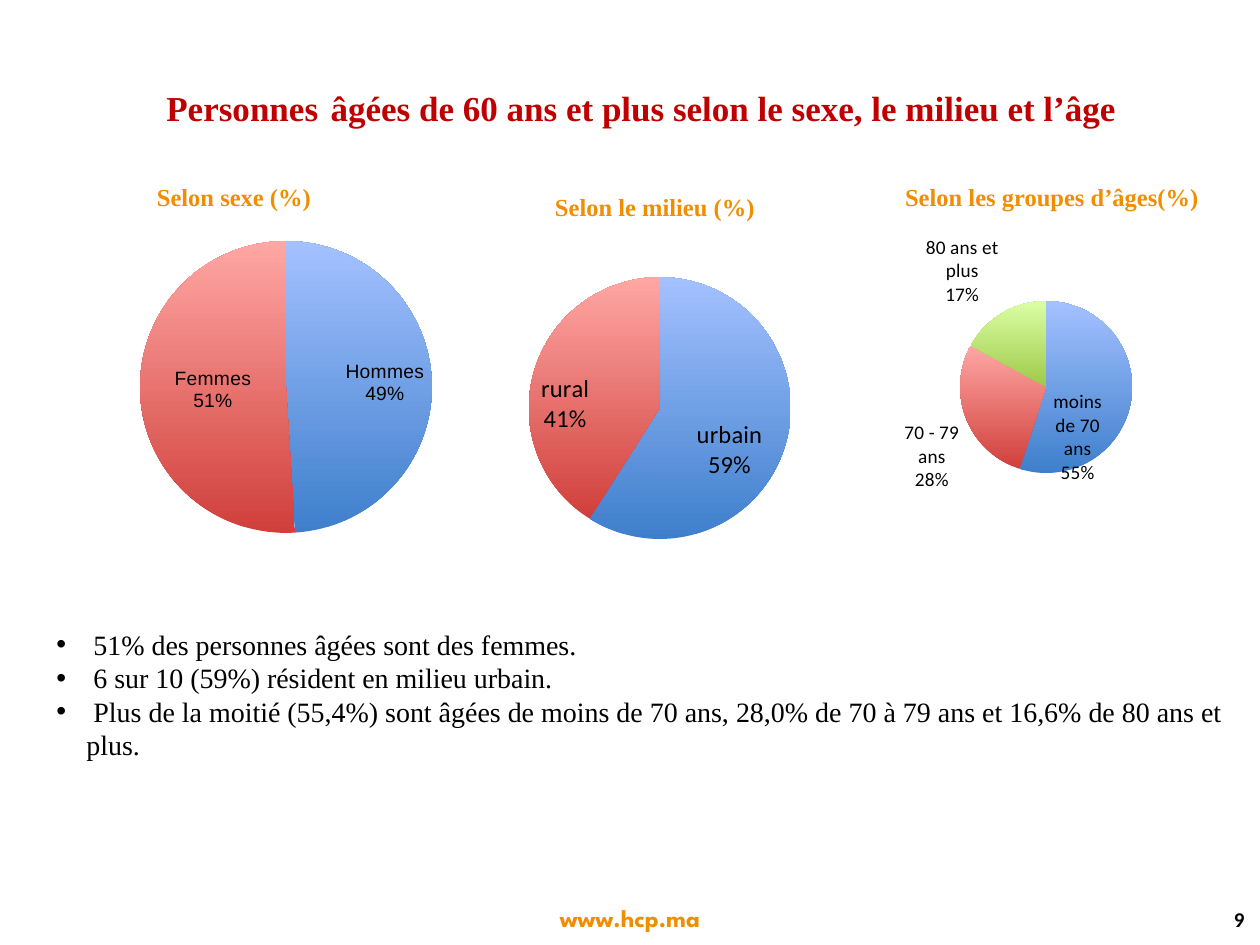
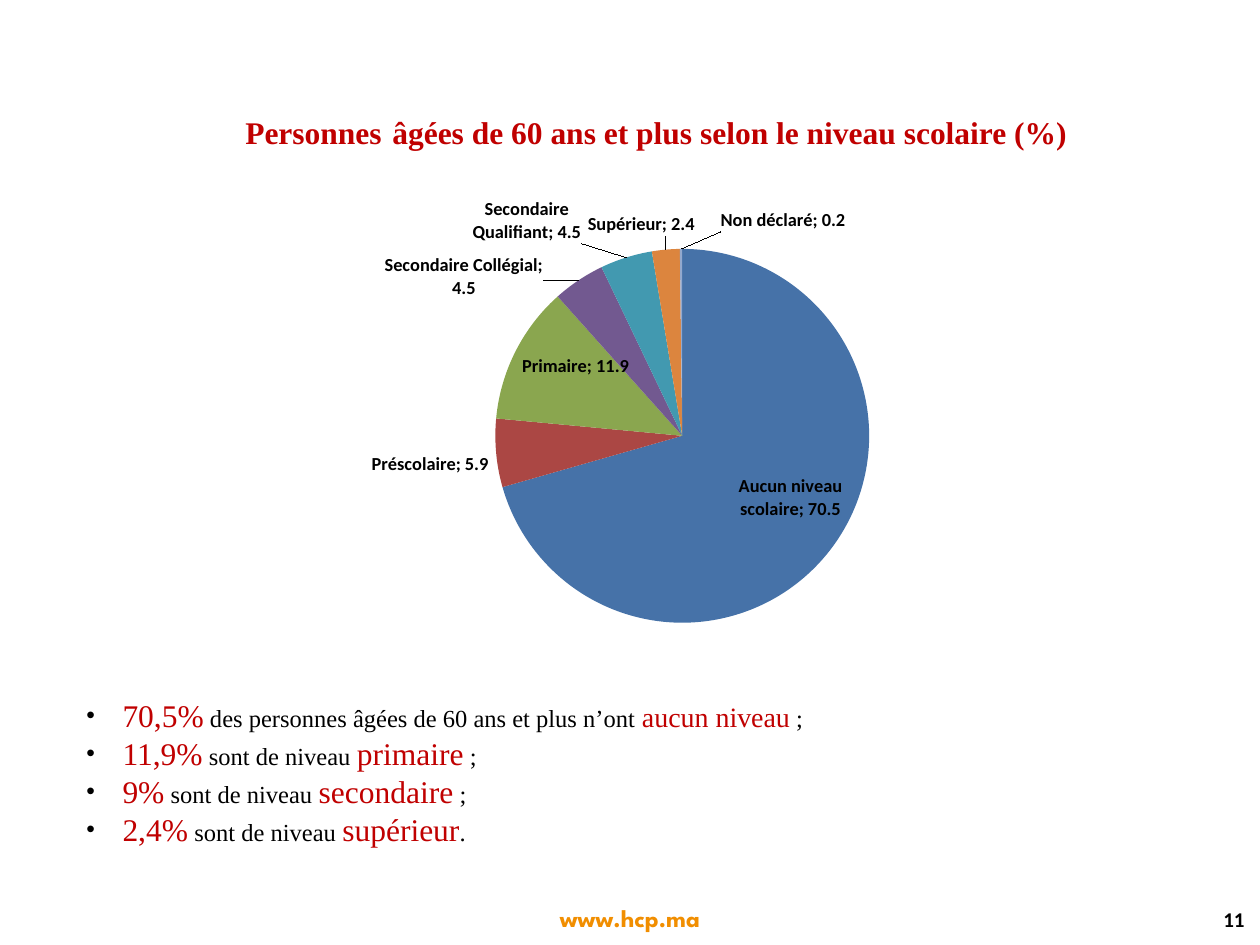
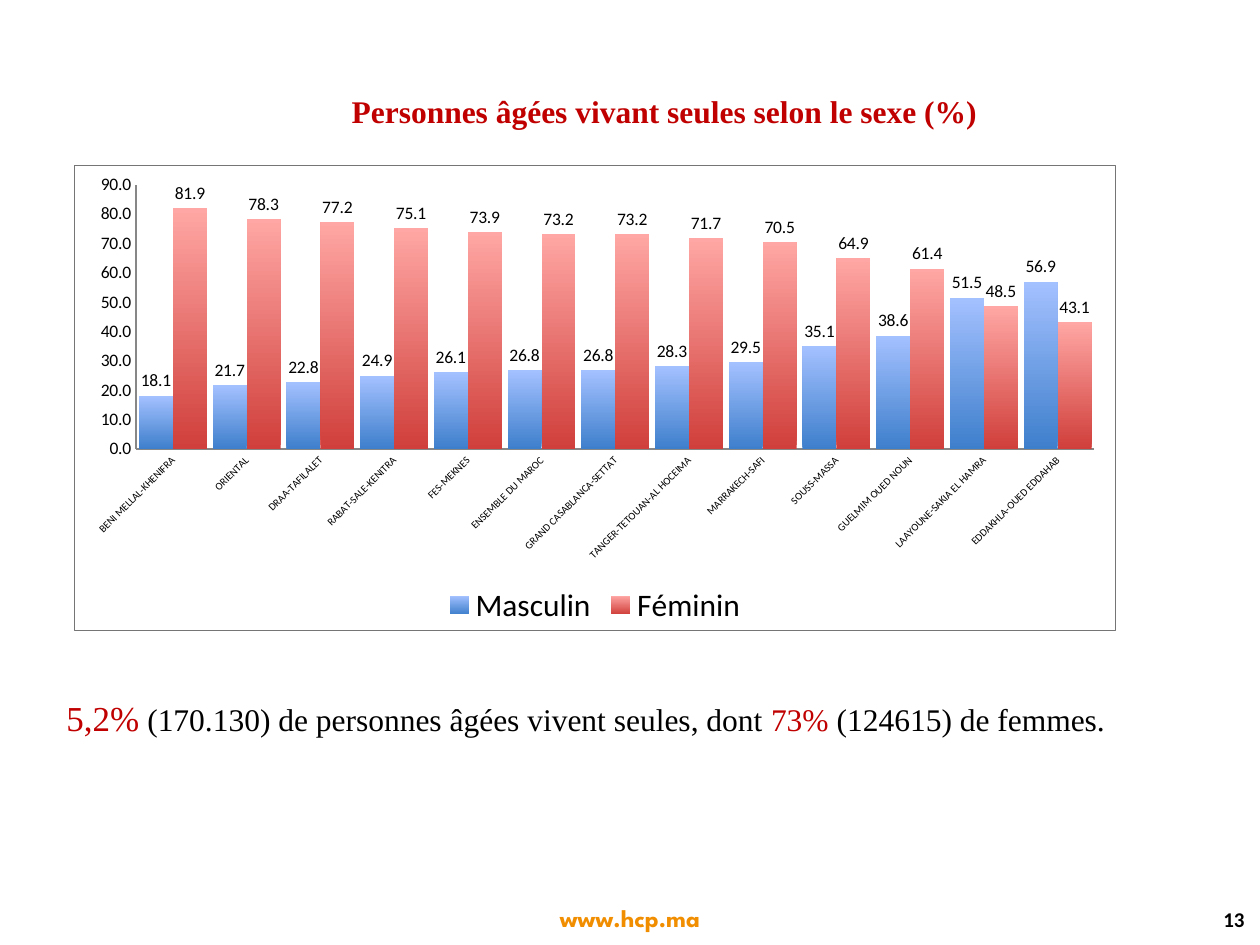
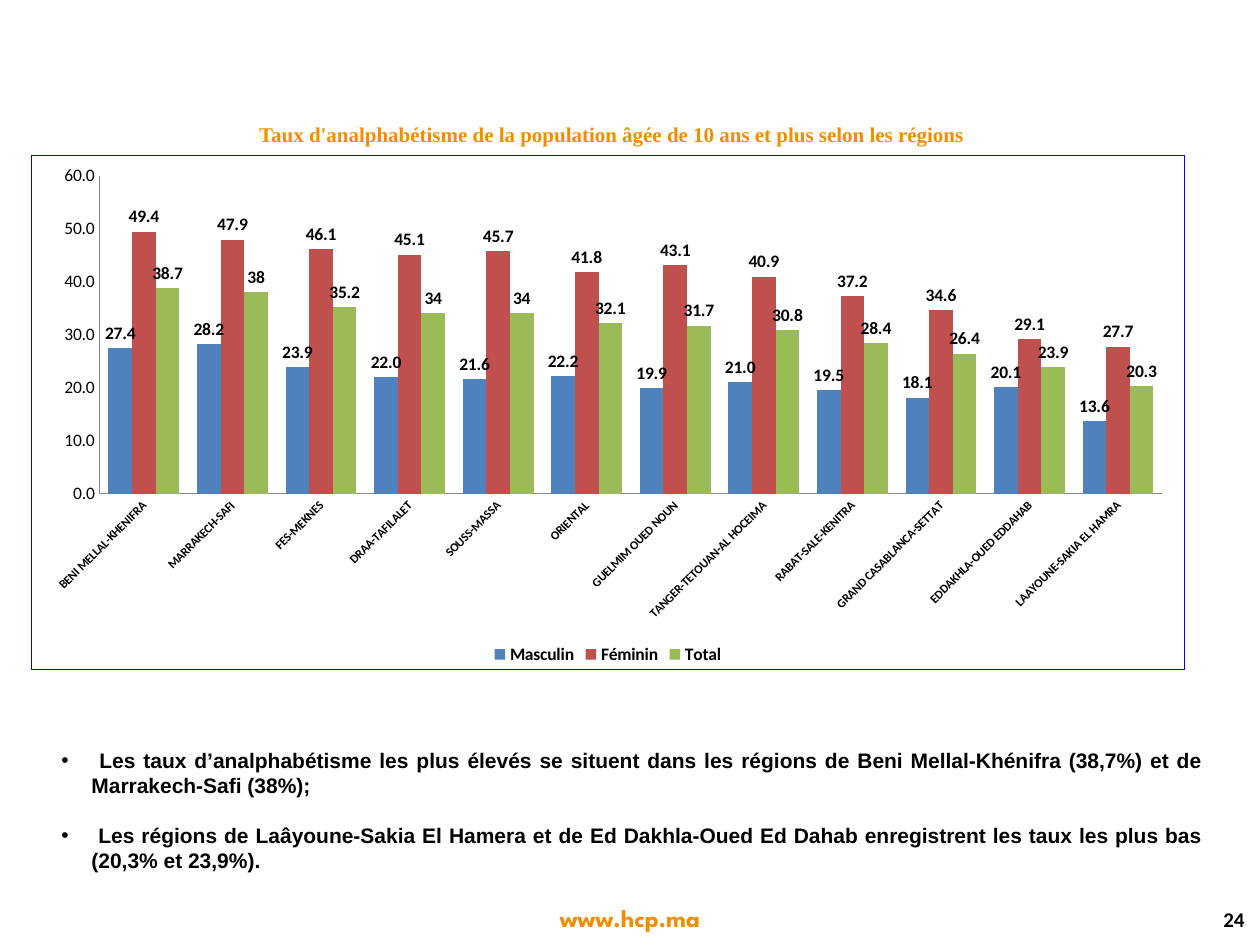
from typing import NamedTuple

from lxml.etree import SubElement
from pptx import Presentation
from pptx.chart.data import CategoryChartData
from pptx.dml.color import RGBColor
from pptx.enum.chart import XL_CHART_TYPE, XL_LABEL_POSITION, XL_LEGEND_POSITION, XL_TICK_MARK
from pptx.enum.text import MSO_ANCHOR, PP_ALIGN
from pptx.oxml import parse_xml
from pptx.oxml.ns import nsdecls, qn
from pptx.util import Emu, Pt

PX_PER_INCH = 126
BULLET_HANG = 30

BLACK = RGBColor(0x00, 0x00, 0x00)
WHITE = RGBColor(0xFF, 0xFF, 0xFF)
RED = RGBColor(0xC0, 0x00, 0x00)
ORANGE = RGBColor(0xF1, 0x8E, 0x00)
GREY = RGBColor(0x75, 0x75, 0x75)
BLUE = RGBColor(0x00, 0x00, 0xFF)
SERIES_COLORS = (
    RGBColor(0x4F, 0x81, 0xBD),
    RGBColor(0xC0, 0x50, 0x4D),
    RGBColor(0x9B, 0xBB, 0x59),
)

SERIF = "Times New Roman"
SANS = "Arial"
CHART_FONT = "Calibri"
FOOTER_FONT = "League Spartan"
SHADED_STYLE = 26  # built-in chart style: theme accents with a vertical gradient

CENTER = XL_LABEL_POSITION.CENTER
INSIDE = XL_LABEL_POSITION.INSIDE_END
OUTSIDE = XL_LABEL_POSITION.OUTSIDE_END


class Box(NamedTuple):
    left: int
    top: int
    width: int
    height: int


class Span(NamedTuple):
    text: str
    size: float
    color: RGBColor = BLACK
    bold: bool = False
    font: str = SERIF


class Slice(NamedTuple):
    """One pie slice, with its label's position and shift in px."""
    name: str
    value: float
    position: XL_LABEL_POSITION
    shift: tuple = (0, 0)


def px(length):
    return Emu(round(length * 914400 / PX_PER_INCH))


def place(box):
    return [px(length) for length in box]


def style_font(font, size, bold=False, name=CHART_FONT, color=BLACK):
    font.size = Pt(size)
    font.bold = bold
    font.name = name
    font.color.rgb = color


def add_bullet(paragraph):
    properties = paragraph._p.get_or_add_pPr()
    properties.set("marL", str(px(BULLET_HANG)))
    properties.set("indent", str(-px(BULLET_HANG)))
    SubElement(properties, qn("a:buFont"), typeface=SANS)
    SubElement(properties, qn("a:buChar"), char="•")


def add_text(page, box, paragraphs, align=PP_ALIGN.LEFT, anchor=MSO_ANCHOR.TOP,
             wrap=True, bullets=False, gap=0):
    """Add a text box; each paragraph is a list of spans."""
    frame = page.shapes.add_textbox(*place(box)).text_frame
    frame.word_wrap = wrap
    frame.vertical_anchor = anchor
    for index, spans in enumerate(paragraphs):
        paragraph = frame.paragraphs[0] if index == 0 else frame.add_paragraph()
        paragraph.alignment = align
        if index and gap:
            paragraph.space_before = Pt(gap)
        if bullets:
            add_bullet(paragraph)
        for span in spans:
            run = paragraph.add_run()
            run.text = span.text
            style_font(run.font, span.size, span.bold, span.font, span.color)


def add_title(page, box, opening, rest, size, gap_size):
    spans = [Span(opening, size, RED, True), Span(" ", gap_size, RED),
             Span(rest, size, RED, True)]
    add_text(page, box, [spans], wrap=False)


def add_heading(page, box, text, size=14, color=ORANGE, wrap=True):
    add_text(page, box, [[Span(text, size, color, True)]],
             PP_ALIGN.CENTER, MSO_ANCHOR.MIDDLE, wrap)


def add_page(deck, number):
    page = deck.slides.add_slide(deck.slide_layouts[6])
    add_text(page, Box(481, 897, 298, 42),
             [[Span("www.hcp.ma", 14, ORANGE, True, FOOTER_FONT)]],
             PP_ALIGN.CENTER, MSO_ANCHOR.MIDDLE)
    add_text(page, Box(1066, 897, 191, 44),
             [[Span(str(number), 12, BLACK, True, CHART_FONT)]],
             PP_ALIGN.RIGHT, MSO_ANCHOR.MIDDLE)
    return page


def manual_layout(**settings):
    children = "".join(f'<c:{tag} val="{value}"/>' for tag, value in settings.items())
    return parse_xml(f'<c:layout {nsdecls("c")}><c:manualLayout>{children}'
                     "</c:manualLayout></c:layout>")


def set_plot_area(chart, box, plot):
    """Fix the inner plot area; plot is relative to the chart's box."""
    area = chart.element.xpath("c:chart/c:plotArea")[0]
    for layout in area.findall(qn("c:layout")):
        area.remove(layout)
    area.insert(0, manual_layout(
        layoutTarget="inner", xMode="edge", yMode="edge",
        x=round(plot.left / box.width, 3), y=round(plot.top / box.height, 3),
        w=round(plot.width / box.width, 3), h=round(plot.height / box.height, 3)))


def add_chart(page, kind, box, plot, categories, series, font=CHART_FONT):
    data = CategoryChartData()
    data.categories = categories
    for name, values in series:
        data.add_series(name, values)
    chart = page.shapes.add_chart(kind, *place(box), data).chart
    chart.has_title = False
    chart.has_legend = False
    style_font(chart.font, 10, name=font)
    set_plot_area(chart, box, plot)
    return chart


def add_pie(page, box, plot, slices, size, percent=True, bold=False,
            font=CHART_FONT, shaded=True):
    chart = add_chart(page, XL_CHART_TYPE.PIE, box, plot, [part.name for part in slices],
                      [("Series 1", [part.value for part in slices])], font)
    if shaded:
        chart.chart_style = SHADED_STYLE
    chart.plots[0].vary_by_categories = True
    series = chart.plots[0].series[0]
    labels = series.data_labels
    labels.show_category_name = True
    labels.show_percentage = percent
    labels.show_value = not percent
    style_font(labels.font, size, bold, font)
    if not percent:
        labels.number_format = "0.0"
        labels.number_format_is_linked = False
    for index, part in enumerate(slices):
        label = series.points[index].data_label
        style_font(label.font, size, bold, font)
        label.position = part.position
    for part, label in zip(slices, chart.element.xpath(".//c:dLbl")):
        label.find(qn("c:showCatName")).set("val", "1")
        label.find(qn("c:showPercent")).set("val", str(int(percent)))
        label.find(qn("c:showVal")).set("val", str(int(not percent)))
        if any(part.shift):
            across, down = part.shift
            label.insert(1, manual_layout(x=round(across / box.width, 3),
                                          y=round(down / box.height, 3)))


def add_border(chart, color):
    chart.element.find(qn("c:chart")).addnext(parse_xml(
        f'<c:spPr {nsdecls("c", "a")}><a:noFill/><a:ln w="9525"><a:solidFill>'
        f'<a:srgbClr val="{color}"/></a:solidFill></a:ln></c:spPr>'))


def style_axes(chart, category_size, bold):
    categories, values = chart.category_axis, chart.value_axis
    for axis in (categories, values):
        axis.major_tick_mark = axis.minor_tick_mark = XL_TICK_MARK.NONE
        axis.has_major_gridlines = False
    style_font(categories.tick_labels.font, category_size, bold)
    chart.element.xpath(".//c:catAx/c:txPr/a:bodyPr")[0].set("rot", "-2700000")
    style_font(values.tick_labels.font, 10)
    values.tick_labels.number_format = "0.0"
    values.tick_labels.number_format_is_linked = False


def add_columns(page, box, plot, categories, series, gap, border, category_size,
                legend_size, bold=False, shaded=False):
    chart = add_chart(page, XL_CHART_TYPE.COLUMN_CLUSTERED, box, plot, categories, series)
    add_border(chart, border)
    style_axes(chart, category_size, bold)
    columns = chart.plots[0]
    columns.vary_by_categories = False
    columns.gap_width = gap
    columns.overlap = 0
    if shaded:
        chart.chart_style = SHADED_STYLE
    for group, color in zip(columns.series, SERIES_COLORS):
        if not shaded:
            group.format.fill.solid()
            group.format.fill.fore_color.rgb = color
        labels = group.data_labels
        labels.show_value = True
        labels.position = OUTSIDE
        labels.number_format = "General" if group.name == "Total" else "0.0"
        labels.number_format_is_linked = False
        style_font(labels.font, 10, bold)
    chart.has_legend = True
    chart.legend.position = XL_LEGEND_POSITION.BOTTOM
    chart.legend.include_in_layout = False
    style_font(chart.legend.font, legend_size, bold)
    return chart


def build_breakdown(deck):
    page = add_page(deck, 9)
    add_title(page, Box(154, 66, 990, 72), "Personnes",
              "âgées de 60 ans et plus selon le sexe, le milieu et l’âge", 20, 28)
    add_heading(page, Box(144, 175, 180, 43), "Selon sexe (%)", wrap=False)
    add_heading(page, Box(541, 185, 228, 43), "Selon le milieu (%)")
    add_heading(page, Box(888, 175, 328, 43), "Selon les groupes d’âges(%)")
    add_pie(page, Box(35, 224, 418, 328), Box(105, 17, 292, 292),
            [Slice("Hommes", 49, INSIDE), Slice("Femmes", 51, CENTER)], 11, font=SANS)
    add_pie(page, Box(451, 244, 435, 328), Box(78, 33, 262, 262),
            [Slice("urbain", 59, CENTER, (7, 24)), Slice("rural", 41, INSIDE)], 14)
    add_pie(page, Box(848, 214, 392, 318), Box(112, 87, 172, 172),
            [Slice("moins de 70 ans", 55, CENTER, (-11, 44)),
             Slice("70 - 79 ans", 28, OUTSIDE),
             Slice("80 ans et plus", 17, OUTSIDE)], 11)
    lines = (
        " 51% des personnes âgées sont des femmes.",
        " 6 sur 10 (59%) résident en milieu urbain.",
        " Plus de la moitié (55,4%) sont âgées de moins de 70 ans, "
        "28,0% de 70 à 79 ans et 16,6% de 80 ans et plus.",
    )
    add_text(page, Box(44, 621, 1191, 168), [[Span(line, 16)] for line in lines],
             PP_ALIGN.JUSTIFY, bullets=True)


def build_schooling(deck):
    page = add_page(deck, 11)
    add_title(page, Box(233, 96, 856, 63), "Personnes",
              "âgées de 60 ans et plus selon le niveau scolaire (%)", 18, 24)
    add_pie(page, Box(263, 185, 804, 466), Box(232, 64, 374, 374),
            [Slice("Aucun niveau scolaire", 70.5, CENTER, (34, 6)),
             Slice("Préscolaire", 5.9, OUTSIDE),
             Slice("Primaire", 11.9, INSIDE),
             Slice("Secondaire Collégial", 4.5, OUTSIDE, (-31, 25)),
             Slice("Secondaire Qualifiant", 4.5, OUTSIDE, (-43, -7)),
             Slice("Supérieur", 2.4, OUTSIDE, (30, -6)),
             Slice("Non déclaré", 0.2, OUTSIDE, (102, -10))],
            10.5, percent=False, bold=True, shaded=False)
    findings = (
        ("70,5%", " des personnes âgées de 60 ans et plus n’ont ", "aucun niveau", 16, " ;"),
        ("11,9%", " sont de niveau ", "primaire", 18, " ;"),
        ("9%", " sont de niveau ", "secondaire", 18, " ;"),
        ("2,4%", " sont de niveau ", "supérieur", 18, "."),
    )
    add_text(page, Box(74, 690, 1111, 165),
             [[Span(" ", 14), Span(share, 18, RED), Span(link, 14),
               Span(level, size, RED), Span(ending, 14)]
              for share, link, level, size, ending in findings], bullets=True)


def build_living_alone(deck):
    page = add_page(deck, 13)
    add_heading(page, Box(292, 86, 745, 50),
                "Personnes âgées vivant seules selon le sexe (%)", 18, RED)
    regions = (
        "BENI MELLAL-KHENIFRA", "ORIENTAL", "DRAA-TAFILALET", "RABAT-SALE-KENITRA",
        "FES-MEKNES", "ENSEMBLE DU MAROC", "GRAND CASABLANCA-SETTAT",
        "TANGER-TETOUAN-AL HOCEIMA", "MARRAKECH-SAFI", "SOUSS-MASSA",
        "GUELMIM OUED NOUN", "LAAYOUNE-SAKIA EL HAMRA", "EDDAKHLA-OUED EDDAHAB",
    )
    series = (
        ("Masculin", (18.1, 21.7, 22.8, 24.9, 26.1, 26.8, 26.8, 28.3, 29.5, 35.1,
                      38.6, 51.5, 56.9)),
        ("Féminin", (81.9, 78.3, 77.2, 75.1, 73.9, 73.2, 73.2, 71.7, 70.5, 64.9,
                     61.4, 48.5, 43.1)),
    )
    chart = add_columns(page, Box(74, 165, 1042, 466), Box(61, 19, 960, 265), regions,
                        series, 17, GREY, 6, 18, shaded=True)
    gridline = chart.value_axis.major_gridlines.format.line
    gridline.color.rgb = WHITE
    gridline.width = Pt(0.75)
    add_text(page, Box(54, 690, 1121, 93),
             [[Span("5,2%", 20, RED),
               Span(" (170.130) de personnes âgées vivent seules, dont ", 18),
               Span("73%", 18, RED), Span(" (124615) de femmes.", 18)]])


def build_illiteracy(deck):
    page = add_page(deck, 24)
    add_heading(page, Box(66, 115, 1092, 38),
                "Taux d'analphabétisme de la population âgée de 10 ans et plus "
                "selon les régions", 12)
    regions = (
        "BENI MELLAL-KHENIFRA", "MARRAKECH-SAFI", "FES-MEKNES", "DRAA-TAFILALET",
        "SOUSS-MASSA", "ORIENTAL", "GUELMIM OUED NOUN", "TANGER-TETOUAN-AL HOCEIMA",
        "RABAT-SALE-KENITRA", "GRAND CASABLANCA-SETTAT", "EDDAKHLA-OUED EDDAHAB",
        "LAAYOUNE-SAKIA EL HAMRA",
    )
    series = (
        ("Masculin", (27.4, 28.2, 23.9, 22, 21.6, 22.2, 19.9, 21, 19.5, 18.1, 20.1, 13.6)),
        ("Féminin", (49.4, 47.9, 46.1, 45.1, 45.7, 41.8, 43.1, 40.9, 37.2, 34.6, 29.1, 27.7)),
        ("Total", (38.7, 38, 35.2, 34, 34, 32.1, 31.7, 30.8, 28.4, 26.4, 23.9, 20.3)),
    )
    add_columns(page, Box(31, 155, 1154, 515), Box(68, 20, 1064, 319), regions, series,
                75, BLUE, 7, 10, bold=True)
    lines = (
        " Les taux d’analphabétisme les plus élevés se situent dans les régions de "
        "Beni Mellal-Khénifra (38,7%) et de Marrakech-Safi (38%);",
        " Les régions de Laâyoune-Sakia El Hamera et de Ed Dakhla-Oued Ed Dahab "
        "enregistrent les taux les plus bas (20,3% et 23,9%).",
    )
    add_text(page, Box(49, 740, 1167, 140),
             [[Span(line, 12, BLACK, True, SANS)] for line in lines],
             PP_ALIGN.JUSTIFY, MSO_ANCHOR.MIDDLE, bullets=True, gap=14)


def main():
    deck = Presentation()
    deck.slide_width, deck.slide_height = px(1260), px(945)
    for build in (build_breakdown, build_schooling, build_living_alone, build_illiteracy):
        build(deck)
    deck.save("out.pptx")


if __name__ == "__main__":
    main()
